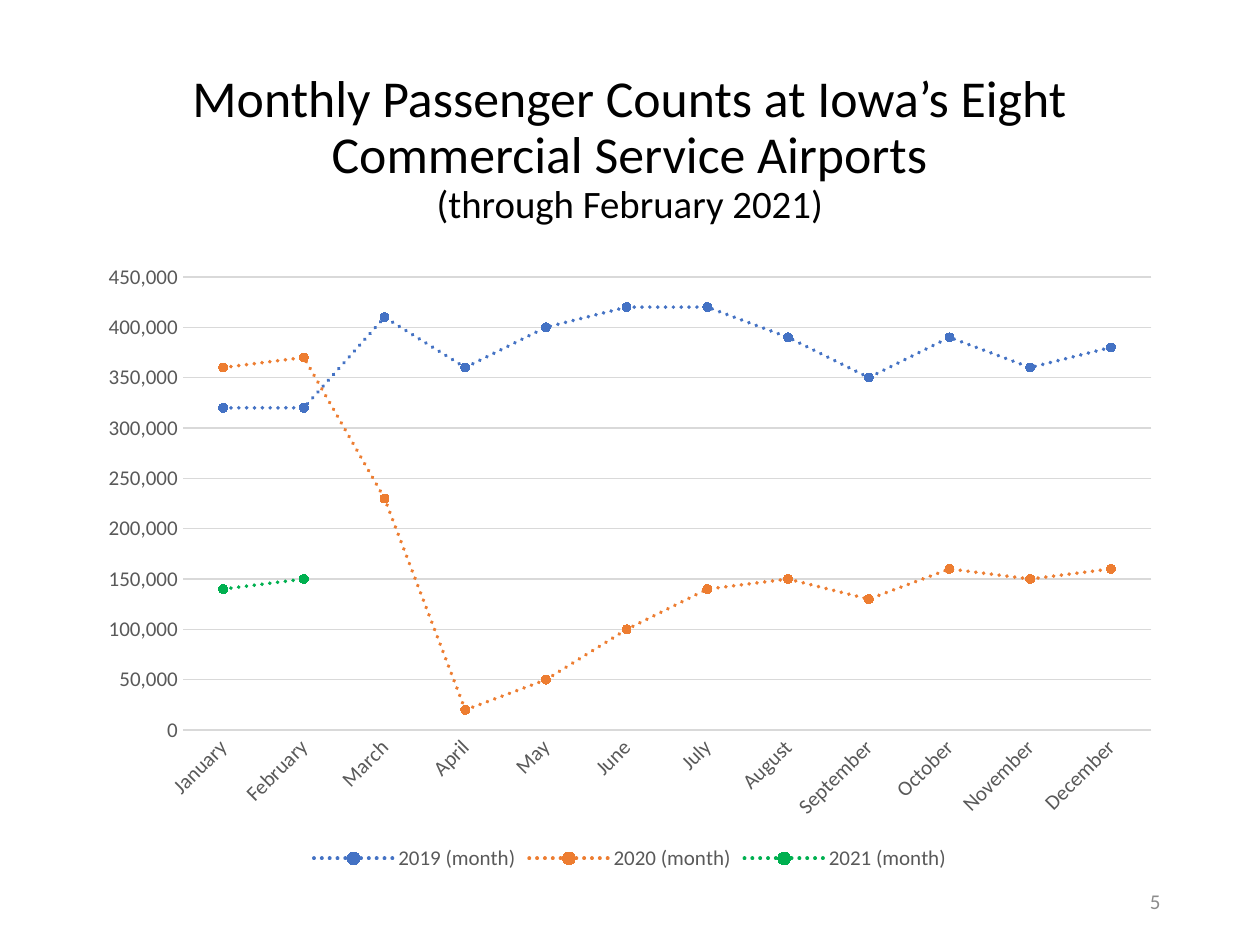
from pptx import Presentation
from pptx import util as u
from pptx.chart import data as chart_data
from pptx.dml import color
from pptx.enum import chart as ch, dml, text
from pptx.oxml import ns

PX = u.Inches(1) // 126
FONT = "Calibri"
COLORS = {
    "title": "000000",
    "label": "595959",
    "grid": "D9D9D9",
    "number": "8C8C8C",
    "2019 (month)": "4472C4",
    "2020 (month)": "ED7D31",
    "2021 (month)": "00B050",
}
MONTHS = ["January", "February", "March", "April", "May", "June", "July",
          "August", "September", "October", "November", "December"]
TEN_THOUSANDS = {
    "2019 (month)": [32, 32, 41, 36, 40, 42, 42, 39, 35, 39, 36, 38],
    "2020 (month)": [36, 37, 23, 2, 5, 10, 14, 15, 13, 16, 15, 16],
    "2021 (month)": [14, 15] + [None] * 10,
}


def rgb(name):
    return color.RGBColor.from_string(COLORS[name])


def box(left, top, width, height):
    return [value * PX for value in (left, top, width, height)]


def style_font(font, size, name):
    font.name = FONT
    font.size = u.Pt(size)
    font.color.rgb = rgb(name)


def style_line(line, name, width):
    line.color.rgb = rgb(name)
    line.width = u.Pt(width)


def add_text(slide, place, lines, name, align, anchor, spacing=1.0):
    frame = slide.shapes.add_textbox(*box(*place)).text_frame
    frame.word_wrap = True
    frame.vertical_anchor = anchor
    frame.text = "\n".join(line for line, size in lines)
    for paragraph, (line, size) in zip(frame.paragraphs, lines):
        paragraph.alignment = align
        paragraph.line_spacing = spacing
        style_font(paragraph.runs[0].font, size, name)


def style_axes(chart):
    months, counts = chart.category_axis, chart.value_axis
    for axis in (months, counts):
        axis.major_tick_mark = axis.minor_tick_mark = ch.XL_TICK_MARK.NONE
        style_font(axis.tick_labels.font, 12, "label")
    style_line(months.format.line, "grid", 0.75)
    body = months.tick_labels.font._element.getparent().getparent().getparent()
    body.find(ns.qn("a:bodyPr")).set("rot", str(-45 * 60000))
    counts.minimum_scale, counts.maximum_scale = 0, 450000
    counts.major_unit = 50000
    counts.tick_labels.number_format = "#,##0"
    counts.tick_labels.number_format_is_linked = False
    counts.format.line.fill.background()
    style_line(counts.major_gridlines.format.line, "grid", 0.75)


def style_series(series):
    series.smooth = False
    style_line(series.format.line, series.name, 2.25)
    series.format.line.dash_style = dml.MSO_LINE.ROUND_DOT
    outline = series._element.find(ns.qn("c:spPr")).find(ns.qn("a:ln"))
    outline.set("cap", "rnd")
    marker = series.marker
    marker.style = ch.XL_MARKER_STYLE.CIRCLE
    marker.size = 5
    marker.format.fill.solid()
    marker.format.fill.fore_color.rgb = rgb(series.name)
    style_line(marker.format.line, series.name, 0.75)


def add_passenger_chart(slide, place):
    passengers = chart_data.CategoryChartData(number_format="#,##0")
    passengers.categories = MONTHS
    for name, values in TEN_THOUSANDS.items():
        passengers.add_series(name, [v and v * 10000 for v in values])
    chart = slide.shapes.add_chart(
        ch.XL_CHART_TYPE.LINE_MARKERS, *box(*place), passengers).chart
    style_font(chart.font, 10, "title")
    chart.has_title = False
    chart.has_legend = True
    chart.legend.position = ch.XL_LEGEND_POSITION.BOTTOM
    chart.legend.include_in_layout = False
    style_font(chart.legend.font, 12, "label")
    style_axes(chart)
    plot = chart.plots[0]
    plot.vary_by_categories = False
    for series in plot.series:
        style_series(series)


def main():
    presentation = Presentation()
    presentation.slide_width = 1260 * PX
    presentation.slide_height = 945 * PX
    slide = presentation.slides.add_slide(presentation.slide_layouts[6])
    add_passenger_chart(slide, (87, 252, 1086, 624))
    add_text(slide, (890, 876, 283, 50), [("5", 12)], "number",
             text.PP_ALIGN.RIGHT, text.MSO_ANCHOR.MIDDLE)
    add_text(slide, (87, 50, 1086, 183),
             [("Monthly Passenger Counts at Iowa’s Eight Commercial Service Airports", 29.6),
              ("(through February 2021)", 22.2)],
             "title", text.PP_ALIGN.CENTER, text.MSO_ANCHOR.BOTTOM, 0.9)
    presentation.save("out.pptx")


if __name__ == "__main__":
    main()
